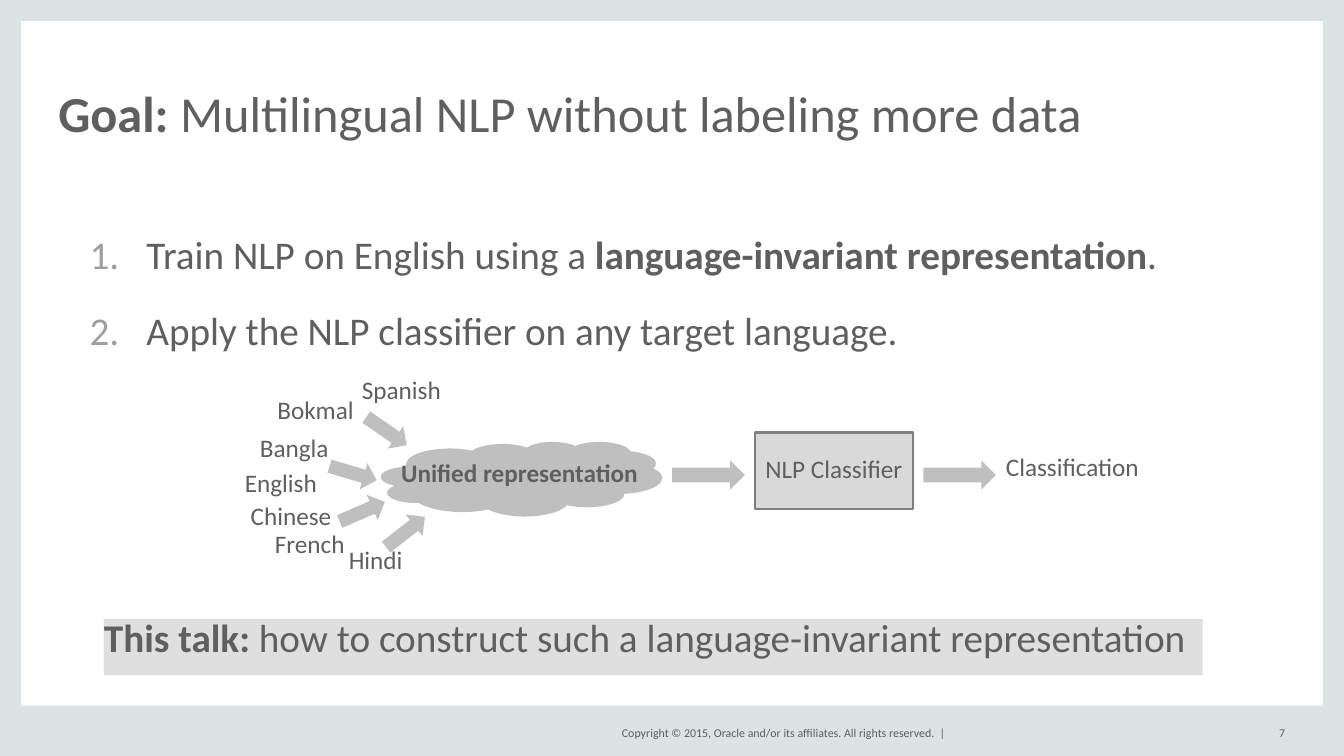
import pptx
import pptx.dml.color
import pptx.enum.shapes
import pptx.enum.text
import pptx.util
from lxml import etree
from pptx.oxml.ns import qn

Cm = pptx.util.Cm
Pt = pptx.util.Pt
SHAPE = pptx.enum.shapes.MSO_SHAPE
ALIGN = pptx.enum.text.PP_ALIGN
ANCHOR = pptx.enum.text.MSO_ANCHOR

COLORS = {
    "frame": "DCE3E4",
    "text": "5F5F5F",
    "number": "9F9F9F",
    "banner": "DFDFDF",
    "flow": "BFBFBF",
    "classifier": "D9D9D9",
    "outline": "808080",
}
SLIDE_W, SLIDE_H = 33.87, 19.05
SIDE, FOOTER_TOP = 0.53, 17.78

# left, top
LANGUAGES = {
    "Spanish": (9.12, 9.53),
    "Bokmal": (6.99, 10.03),
    "Bangla": (6.55, 10.97),
    "English": (6.17, 11.86),
    "Chinese": (6.32, 12.7),
    "French": (6.93, 13.41),
    "Hindi": (8.79, 13.79),
}
# left, top, degrees
LANGUAGE_ARROWS = [
    (9.12, 10.52, 34.6),
    (8.28, 11.58, 16.6),
    (8.51, 12.55, 336.6),
    (9.6, 13.06, 322),
]


def rgb(name):
    return pptx.dml.color.RGBColor.from_string(COLORS[name])


def write(frame, *paragraphs, size=18, align=ALIGN.LEFT, anchor=ANCHOR.TOP,
          spacing=0.9, gap=0, numbered=False):
    """Fill a text frame; each paragraph is a list of (text, bold) runs."""
    frame.word_wrap = True
    frame.vertical_anchor = anchor
    frame.margin_left = frame.margin_right = 0
    frame.margin_top = frame.margin_bottom = 0
    for index, runs in enumerate(paragraphs):
        paragraph = frame.add_paragraph() if index else frame.paragraphs[0]
        if numbered:
            number(paragraph)
        paragraph.alignment = align
        paragraph.line_spacing = spacing
        if index:
            paragraph.space_before = Pt(gap)
        for text, bold in runs:
            run = paragraph.add_run()
            run.text = text
            run.font.name = "Calibri"
            run.font.size = Pt(size)
            run.font.bold = bold
            run.font.color.rgb = rgb("text")


def number(paragraph):
    """Give a paragraph a hanging automatic number."""
    properties = paragraph._p.get_or_add_pPr()
    properties.set("marL", str(Cm(1.43)))
    properties.set("indent", str(-Cm(1.43)))
    color = etree.SubElement(properties, qn("a:buClr"))
    etree.SubElement(color, qn("a:srgbClr"), val=COLORS["number"])
    etree.SubElement(properties, qn("a:buAutoNum"), type="arabicPeriod")


def add_text(slide, box, *paragraphs, **style):
    textbox = slide.shapes.add_textbox(*map(Cm, box))
    write(textbox.text_frame, *paragraphs, **style)


def add_block(slide, kind, box, fill, outline=None, rotation=0):
    block = slide.shapes.add_shape(kind, *map(Cm, box))
    block.shadow.inherit = False
    block.rotation = rotation
    block.fill.solid()
    block.fill.fore_color.rgb = rgb(fill)
    if outline:
        block.line.color.rgb = rgb(outline)
        block.line.width = Pt(1.5)
    else:
        block.line.fill.background()
    return block


def add_frame(slide):
    for box in [
        (0, 0, SIDE, SLIDE_H),
        (SLIDE_W - SIDE, 0, SIDE, SLIDE_H),
        (0, FOOTER_TOP, SLIDE_W, SLIDE_H - FOOTER_TOP),
        (0, 0, SLIDE_W, SIDE),
    ]:
        add_block(slide, SHAPE.RECTANGLE, box, "frame")
    copyright_line = "Copyright © 2015, Oracle and/or its affiliates. All rights reserved.  |"
    for text, left, width in [(copyright_line, 14.94, 8.89), ("7", 31.32, 1.07)]:
        add_text(slide, (left, 18.21, width, 0.51), [(text, False)],
                 size=8.5, align=ALIGN.RIGHT, anchor=ANCHOR.MIDDLE, spacing=1.0)


def add_pipeline(slide):
    for language, (left, top) in LANGUAGES.items():
        add_text(slide, (left, top, 2.11, 0.91), [(language, False)])

    add_block(slide, SHAPE.CLOUD, (9.6, 11.13, 7.09, 1.88), "flow")
    add_text(slide, (10.11, 11.61, 6.65, 0.91), [("Unified representation", True)])
    for left, top, angle in LANGUAGE_ARROWS:
        add_block(slide, SHAPE.RIGHT_ARROW, (left, top, 1.24, 0.69), "flow",
                  rotation=angle)

    for left in (16.94, 23.27):
        add_block(slide, SHAPE.RIGHT_ARROW, (left, 11.6, 1.83, 0.74), "flow")
    classifier = add_block(slide, SHAPE.RECTANGLE, (19.02, 10.9, 3.99, 1.93),
                           "classifier", outline="outline")
    write(classifier.text_frame, [("NLP Classifier", False)],
          align=ALIGN.CENTER, anchor=ANCHOR.MIDDLE)
    add_text(slide, (25.35, 11.46, 3.81, 0.91), [("Classification", False)])


def main():
    deck = pptx.Presentation()
    deck.slide_width, deck.slide_height = Cm(SLIDE_W), Cm(SLIDE_H)
    slide = deck.slides.add_slide(deck.slide_layouts[6])

    add_frame(slide)
    add_text(slide, (1.47, 1.12, 30.91, 2.46),
             [("Goal: ", True), ("Multilingual NLP without labeling more data", False)],
             size=36, anchor=ANCHOR.BOTTOM, spacing=0.8)
    add_text(slide, (2.26, 5.94, 27.86, 4.5),
             [("Train NLP on English using a ", False),
              ("language-invariant representation", True), (".", False)],
             [("Apply the NLP classifier on any target language.", False)],
             size=28, gap=24, numbered=True)
    banner = add_block(slide, SHAPE.RECTANGLE, (2.62, 15.6, 27.69, 1.42), "banner")
    write(banner.text_frame,
          [("This talk: ", True),
           ("how to construct such a language-invariant representation", False)],
          size=28)
    add_pipeline(slide)

    deck.save("out.pptx")


if __name__ == "__main__":
    main()
